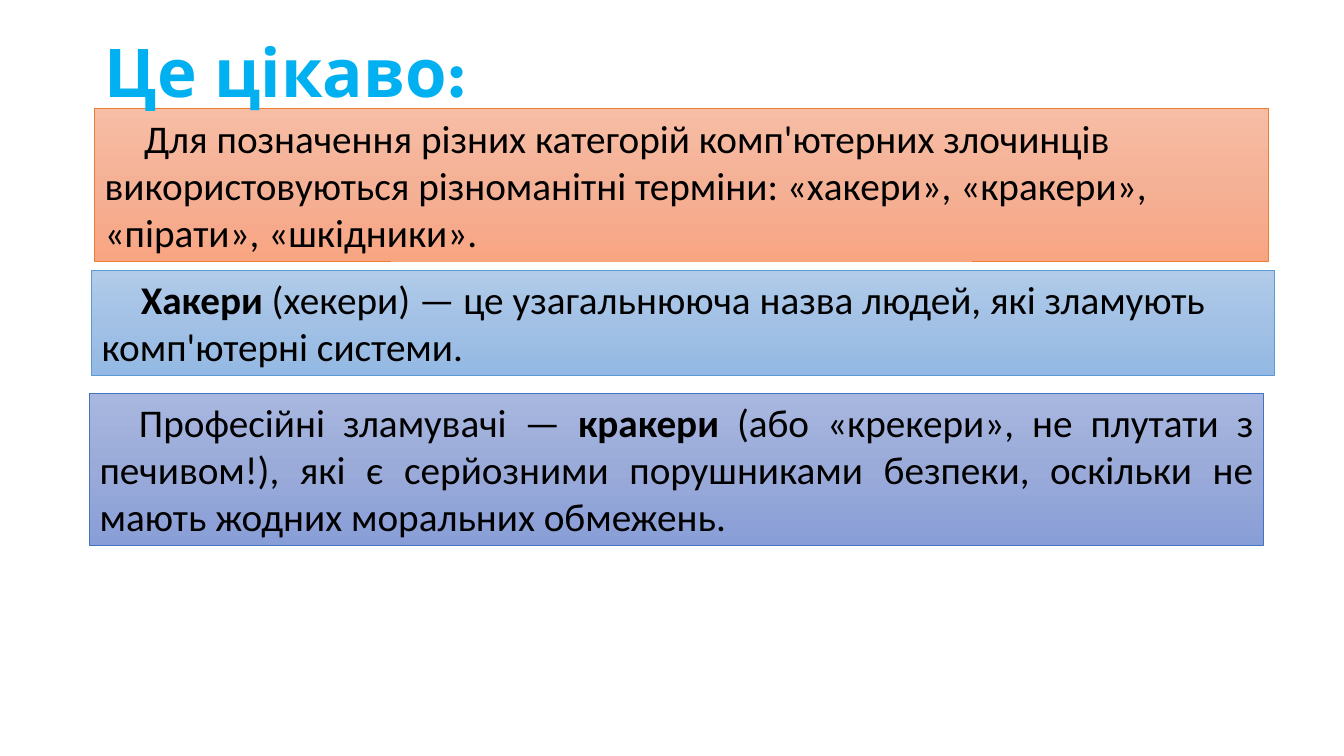
"""Build a slide that explains the terms for computer offenders."""
from copy import deepcopy

from pptx import Presentation
from pptx.dml.color import RGBColor
from pptx.enum.shapes import MSO_SHAPE
from pptx.enum.text import MSO_ANCHOR, MSO_AUTO_SIZE, PP_ALIGN
from pptx.util import Pt

RECTANGLE = MSO_SHAPE.RECTANGLE
TOP, BOTTOM = MSO_ANCHOR.TOP, MSO_ANCHOR.BOTTOM
GROW = MSO_AUTO_SIZE.SHAPE_TO_FIT_TEXT
LEFT, JUSTIFY = PP_ALIGN.LEFT, PP_ALIGN.JUSTIFY

PX = 9144
SLIDE_SIZE = (1333, 750)
INDENT = 39
TITLE = "Це цікаво:"
TITLE_BOX = (94, 25, 986, 90)

THEME = {
    "title_font": "League Spartan", "title_size": 48, "title": "00B0F0",
    "body_font": "Calibri", "body_size": 28, "body": "000000",
    "line_width": 0.5,
    "orange": (("F7BDA5", "F5B196", "F8A582"), "ED7D31"),
    "blue": (("B1CBE9", "A3C1E5", "93B9E4"), "5B9BD5"),
    "indigo": (("A8B7DF", "9AABD9", "889ED7"), "4472C4"),
}

PANELS = [
    {"box": (94, 108, 1164, 151), "palette": "orange", "align": LEFT, "runs": [
        ("Для позначення різних категорій комп'ютерних злочинців використовуються "
         "різноманітні терміни: «хакери», «кракери», «пірати», «шкідники».", False)]},
    {"box": (91, 268, 1173, 104), "palette": "blue", "align": LEFT, "runs": [
        ("Хакери", True),
        (" (хекери) — це узагальнююча назва людей, які зламують "
         "комп'ютерні системи.", False)]},
    {"box": (89, 390, 1164, 151), "palette": "indigo", "align": JUSTIFY, "runs": [
        ("Професійні зламувачі — ", False),
        ("кракери", True),
        (" (або «крекери», не плутати з печивом!), які є серйозними порушниками "
         "безпеки, оскільки не мають жодних моральних обмежень.", False)]},
]


def to_emu(lengths):
    return [length * PX for length in lengths]


def add_run(paragraph, text, role, bold):
    run = paragraph.add_run()
    run.text = text
    run.font.name = THEME[role + "_font"]
    run.font.size = Pt(THEME[role + "_size"])
    run.font.color.rgb = RGBColor.from_string(THEME[role])
    run.font.bold = bold


def paint(shape, palette):
    colours, outline = THEME[palette]
    shape.shadow.inherit = False
    shape.line.color.rgb = RGBColor.from_string(outline)
    shape.line.width = Pt(THEME["line_width"])
    shape.fill.gradient()
    shape.fill.gradient_angle = 270
    first_stop = shape.element.xpath(".//a:gsLst/a:gs")[0]
    first_stop.addnext(deepcopy(first_stop))
    stops = shape.fill.gradient_stops
    for index, (stop, colour) in enumerate(zip(stops, colours)):
        stop.position = index / (len(colours) - 1)
        stop.color.rgb = RGBColor.from_string(colour)


def add_panel(slide, panel):
    shape = slide.shapes.add_shape(RECTANGLE, *to_emu(panel["box"]))
    paint(shape, panel["palette"])
    frame = shape.text_frame
    frame.word_wrap = True
    frame.auto_size = GROW
    frame.vertical_anchor = TOP
    paragraph = frame.paragraphs[0]
    paragraph.alignment = panel["align"]
    paragraph._p.get_or_add_pPr().set("indent", str(INDENT * PX))
    for text, bold in panel["runs"]:
        add_run(paragraph, text, "body", bold)


def add_title(slide):
    frame = slide.shapes.add_textbox(*to_emu(TITLE_BOX)).text_frame
    frame.word_wrap = True
    frame.vertical_anchor = BOTTOM
    paragraph = frame.paragraphs[0]
    paragraph.line_spacing = 0.8
    add_run(paragraph, TITLE, "title", True)


def main():
    presentation = Presentation()
    presentation.slide_width, presentation.slide_height = to_emu(SLIDE_SIZE)
    slide = presentation.slides.add_slide(presentation.slide_layouts[6])
    for panel in PANELS:
        add_panel(slide, panel)
    add_title(slide)
    presentation.save("out.pptx")


if __name__ == "__main__":
    main()
